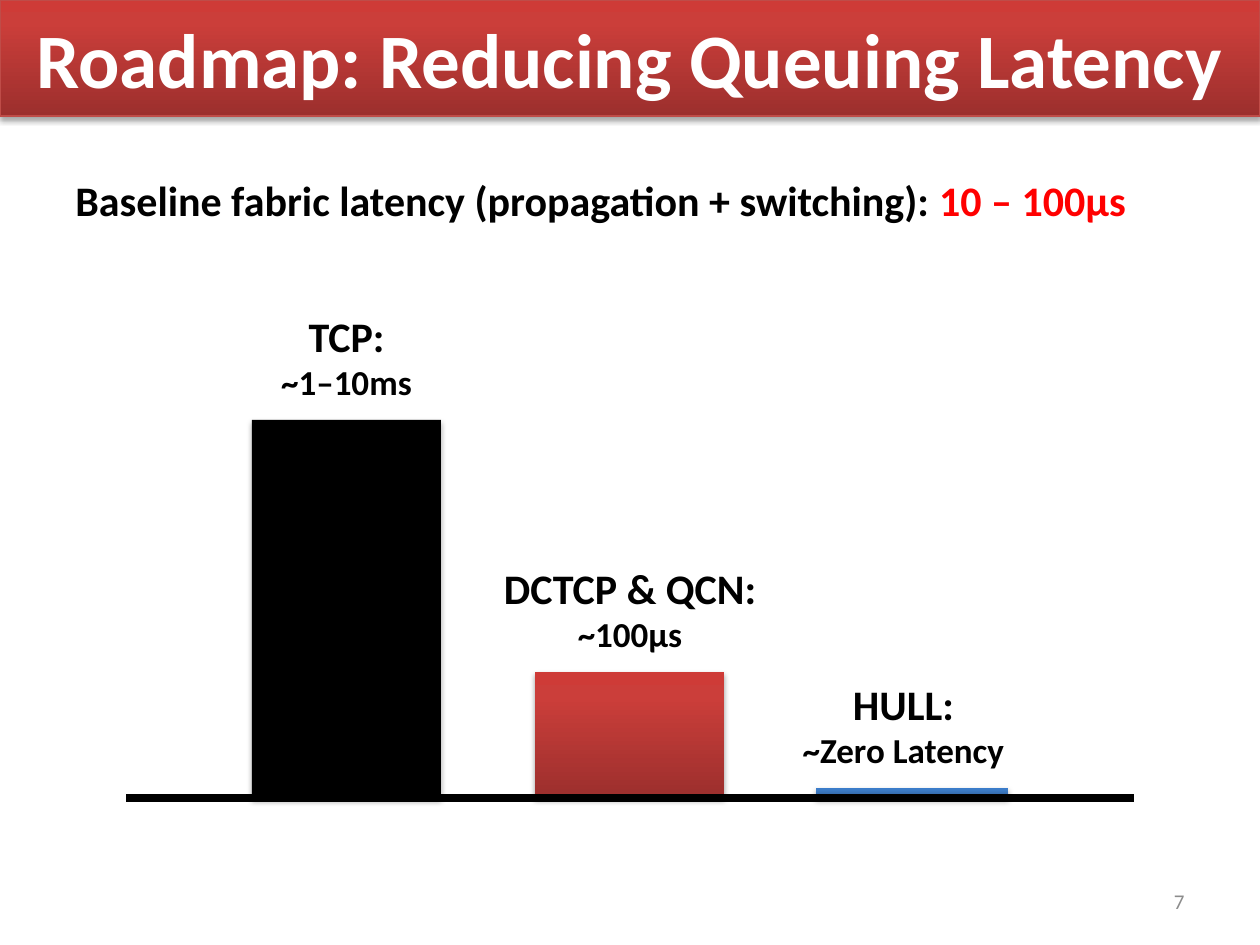
from pptx import Presentation
from pptx.dml.color import RGBColor
from pptx.enum.shapes import MSO_CONNECTOR, MSO_SHAPE
from pptx.enum.text import MSO_ANCHOR, MSO_AUTO_SIZE, PP_ALIGN
from pptx.oxml import parse_xml
from pptx.oxml.ns import nsdecls, qn
from pptx.util import Emu, Pt

RECTANGLE = MSO_SHAPE.RECTANGLE
STRAIGHT = MSO_CONNECTOR.STRAIGHT
LEFT, CENTER, RIGHT = PP_ALIGN.LEFT, PP_ALIGN.CENTER, PP_ALIGN.RIGHT
TOP, MIDDLE = MSO_ANCHOR.TOP, MSO_ANCHOR.MIDDLE
NO_AUTOFIT = MSO_AUTO_SIZE.NONE

SCALE = 914400 / 126
BLACK, WHITE, HIGHLIGHT, GRAY = "000000", "FFFFFF", "FF0000", "8C8C8C"
RED_GRADIENT = ("9C2F2D", "CB3E3A", "CE3B37")
BLUE_GRADIENT = ("2F5F99", "3D7CC7", "3A7CCB")
GRADIENT_POSITIONS = (0, 80000, 100000)
BASELINE = 798
LABEL_HEIGHT, LABEL_GAP = 106, 10


def px(length):
    return Emu(round(length * SCALE))


def color(value):
    return RGBColor.from_string(value)


class SlideBuilder:
    """Holds the style and the current slide, and adds each kind of element."""

    def __init__(self, slide, font="Calibri"):
        self.slide = slide
        self.font = font

    def format_runs(self, paragraph, size, colors, bold, align):
        paragraph.alignment = align
        for run, value in zip(paragraph.runs, colors):
            run.font.name = self.font
            run.font.size = Pt(size)
            run.font.bold = bold
            run.font.color.rgb = color(value)

    def title(self, text, box, size):
        shape = self.slide.shapes.title
        shape.left, shape.top, shape.width, shape.height = map(px, box)
        frame = shape.text_frame
        frame.text = text
        frame.auto_size = NO_AUTOFIT
        frame.vertical_anchor = MIDDLE
        self.format_runs(frame.paragraphs[0], size, [WHITE], True, CENTER)

    def rectangle(self, box, fill, outline=None):
        shape = self.slide.shapes.add_shape(RECTANGLE, *map(px, box))
        if isinstance(fill, str):
            shape.fill.solid()
            shape.fill.fore_color.rgb = color(fill)
        else:
            self.gradient(shape, fill)
        if outline:
            shape.line.color.rgb = color(outline)
            shape.line.width = Pt(0.75)
        else:
            shape.line.fill.background()
        self.shadow(shape)
        return shape

    def gradient(self, shape, colors):
        stops = "".join(
            f'<a:gs pos="{position}"><a:srgbClr val="{value}"/></a:gs>'
            for position, value in zip(GRADIENT_POSITIONS, colors))
        geometry = shape._element.spPr.find(qn("a:prstGeom"))
        geometry.addnext(parse_xml(
            f'<a:gradFill {nsdecls("a")} rotWithShape="1"><a:gsLst>{stops}</a:gsLst>'
            '<a:lin ang="16200000" scaled="0"/></a:gradFill>'))

    def shadow(self, shape):
        shape.shadow.inherit = False
        shape._element.spPr.find(qn("a:effectLst")).append(parse_xml(
            f'<a:outerShdw {nsdecls("a")} blurRad="40000" dist="23000" dir="5400000" '
            'rotWithShape="0"><a:srgbClr val="000000"><a:alpha val="35000"/></a:srgbClr>'
            '</a:outerShdw>'))

    def line(self, start, end, width, value):
        connector = self.slide.shapes.add_connector(STRAIGHT, *map(px, start + end))
        connector.line.color.rgb = color(value)
        connector.line.width = Pt(width)
        connector._element.spPr.append(parse_xml(f'<a:effectLst {nsdecls("a")}/>'))

    def text(self, box, lines, bold=True, align=LEFT, anchor=TOP):
        frame = self.slide.shapes.add_textbox(*map(px, box)).text_frame
        frame.word_wrap = True
        frame.vertical_anchor = anchor
        for index, (size, pieces) in enumerate(lines):
            paragraph = frame.add_paragraph() if index else frame.paragraphs[0]
            for content, _ in pieces:
                paragraph.add_run().text = content
            colors = [value for _, value in pieces]
            self.format_runs(paragraph, size, colors, bold, align)


def main():
    presentation = Presentation()
    presentation.slide_width, presentation.slide_height = px(1260), px(945)
    slide = presentation.slides.add_slide(presentation.slide_layouts[5])
    builder = SlideBuilder(slide)

    header = (0, 0, 1260, 116)
    banner = builder.rectangle(header, RED_GRADIENT, "BF4C48")
    slide.shapes.title._element.addprevious(banner._element)
    builder.title("Roadmap: Reducing Queuing Latency", header, 44)

    bars = [
        (252, 189, 378, BLACK, 231, 231, "TCP:", "~1–10ms"),
        (535, 189, 126, RED_GRADIENT, 483, 294, "DCTCP & QCN:", "~100μs"),
        (816, 192, 10, BLUE_GRADIENT, 746, 315, "HULL:", "~Zero Latency"),
    ]
    for left, width, height, fill, *_ in bars:
        builder.rectangle((left, BASELINE - height, width, height), fill)
    builder.line((126, BASELINE), (1134, BASELINE), 5, BLACK)
    for _, _, height, _, left, width, name, latency in bars:
        top = BASELINE - height - LABEL_GAP - LABEL_HEIGHT
        builder.text((left, top, width, LABEL_HEIGHT),
                     [(24, [(name, BLACK)]), (20, [(latency, BLACK)])], align=CENTER)

    builder.text((63, 168, 1176, 63), [(24, [
        ("Baseline fabric latency (propagation + switching): ", BLACK),
        ("10 – 100μs", HIGHLIGHT)])])
    builder.text((903, 876, 294, 50), [(12, [("7", GRAY)])],
                 bold=False, align=RIGHT, anchor=MIDDLE)

    presentation.save("out.pptx")


if __name__ == "__main__":
    main()
